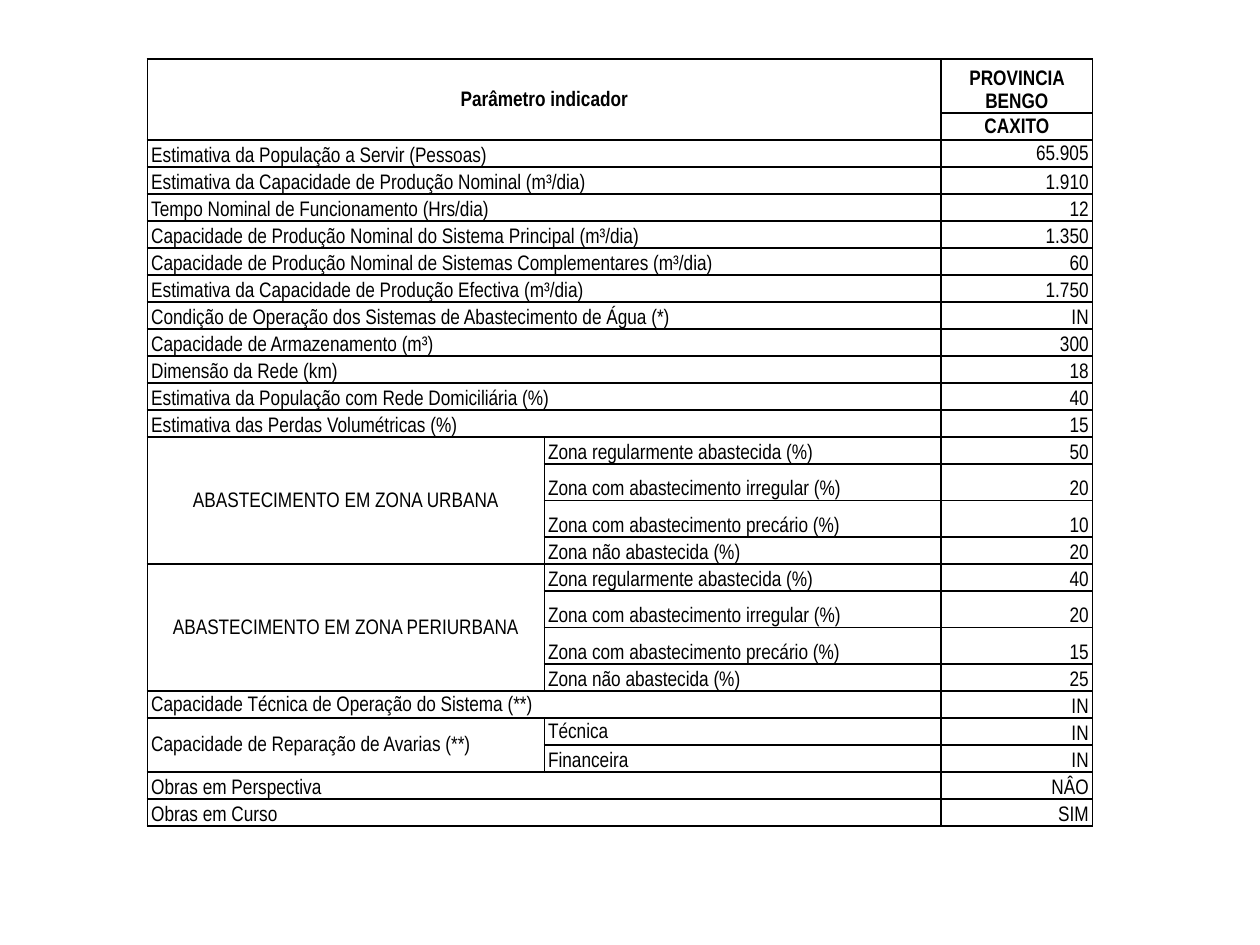
from lxml.etree import SubElement
from pptx import Presentation
from pptx.dml.color import RGBColor
from pptx.enum.text import MSO_ANCHOR as Anchor, PP_ALIGN as Align
from pptx.oxml.ns import qn
from pptx.util import Inches, Pt

BLACK = RGBColor(0, 0, 0)
WHITE = RGBColor(255, 255, 255)

# Table content: (label, value) across the full width
GENERAL = [
    ("Estimativa da População a Servir (Pessoas)", "65.905"),
    ("Estimativa da Capacidade de Produção Nominal (m³/dia)", "1.910"),
    ("Tempo Nominal de Funcionamento (Hrs/dia)", "12"),
    ("Capacidade de Produção Nominal do Sistema Principal (m³/dia)", "1.350"),
    ("Capacidade de Produção Nominal de Sistemas Complementares (m³/dia)", "60"),
    ("Estimativa da Capacidade de Produção Efectiva (m³/dia)", "1.750"),
    ("Condição de Operação dos Sistemas de Abastecimento de Água (*)", "IN"),
    ("Capacidade de Armazenamento (m³)", "300"),
    ("Dimensão da Rede (km)", "18"),
    ("Estimativa da População com Rede Domiciliária (%)", "40"),
    ("Estimativa das Perdas Volumétricas (%)", "15"),
]
SUPPLY = [
    "Zona regularmente abastecida (%)",
    "Zona com abastecimento irregular (%)",
    "Zona com abastecimento precário (%)",
    "Zona não abastecida (%)",
]
ZONES = [
    ("ABASTECIMENTO EM ZONA URBANA", ["50", "20", "10", "20"]),
    ("ABASTECIMENTO EM ZONA PERIURBANA", ["40", "20", "15", "25"]),
]
OPERATION = ("Capacidade Técnica de Operação do Sistema (**)", "IN")
REPAIR = ("Capacidade de Reparação de Avarias (**)",
          [("Técnica", "IN"), ("Financeira", "IN")])
WORKS = [("Obras em Perspectiva", "NÂO"), ("Obras em Curso", "SIM")]

# Row heights: one text line, two lines in the header, taller middle zone rows
LINE = Pt(15.43)
TALL = Inches(0.29)
ZONE_ROWS = [LINE, TALL, TALL, LINE]
ROWS = ([2 * LINE, LINE] + [LINE] * len(GENERAL) + ZONE_ROWS * len(ZONES)
        + [LINE] * (1 + len(REPAIR[1]) + len(WORKS)))
COLUMNS = [0.315, 0.315, 0.12]  # shares of the slide's width


class Sheet:
    """Style of the table and the slide it stands on."""
    font, size, spacing = "Arial Narrow", Pt(12), 1.15
    inset, border = Inches(0.03), Pt(1)

    def __init__(self, prs):
        self.prs = prs
        self.slide = prs.slides.add_slide(prs.slide_layouts[6])

    def table(self, x, y, columns, rows):
        w, h = self.prs.slide_width, self.prs.slide_height
        frame = self.slide.shapes.add_table(
            len(rows), len(columns), int(x * w), int(y * h),
            int(sum(columns) * w), sum(rows))
        self.grid = frame.table
        self.grid.first_row = self.grid.horz_banding = False
        for column, share in zip(self.grid.columns, columns):
            column.width = int(share * w)
        for row, height in zip(self.grid.rows, rows):
            row.height = height
        for cell in self.grid.iter_cells():
            self.borders(cell)
            cell.fill.background()
            cell.margin_left = cell.margin_right = self.inset
            cell.margin_top = cell.margin_bottom = 0
            cell.text_frame.paragraphs[0].font.size = self.size

    def borders(self, cell):
        tc_pr = cell._tc.get_or_add_tcPr()
        for side in ("a:lnL", "a:lnR", "a:lnT", "a:lnB"):
            ln = SubElement(tc_pr, qn(side), w=str(self.border))
            fill = SubElement(ln, qn("a:solidFill"))
            SubElement(fill, qn("a:srgbClr"), val=str(BLACK))

    def cell(self, row, col, text, align=Align.LEFT, anchor=Anchor.BOTTOM,
             span=(1, 1), bold=False, fill=None):
        cell = self.grid.cell(row, col)
        if span != (1, 1):
            cell.merge(self.grid.cell(row + span[0] - 1, col + span[1] - 1))
        cell.vertical_anchor = anchor
        if fill is not None:
            cell.fill.solid()
            cell.fill.fore_color.rgb = fill
        p = cell.text_frame.paragraphs[0]
        p.text = text
        p.alignment = align
        p.line_spacing = self.spacing
        f = p.runs[0].font
        f.name, f.size, f.bold = self.font, self.size, bold
        f.color.rgb = BLACK

    def value(self, row, text, **style):
        self.cell(row, 2, text, Align.RIGHT, **style)

    def wide_row(self, row, label, value, anchor=Anchor.BOTTOM, fill=None):
        self.cell(row, 0, label, anchor=anchor, span=(1, 2), fill=fill)
        self.value(row, value, fill=fill)


def main():
    prs = Presentation()
    prs.slide_width, prs.slide_height = Inches(10), Inches(7.5)
    s = Sheet(prs)
    s.table(0.117, 0.0625, COLUMNS, ROWS)

    # Header
    s.cell(0, 0, "Parâmetro indicador", Align.CENTER, Anchor.MIDDLE, (2, 2), True)
    s.cell(0, 2, "PROVINCIA BENGO", Align.CENTER, bold=True)
    s.cell(1, 2, "CAXITO", Align.CENTER, Anchor.MIDDLE, bold=True)

    # General indicators
    row = 2
    for label, value in GENERAL:
        s.wide_row(row, label, value)
        row += 1
    s.grid.cell(2, 2).vertical_anchor = Anchor.MIDDLE

    # Supply by zone
    for zone, values in ZONES:
        s.cell(row, 0, zone, Align.CENTER, Anchor.MIDDLE, (len(SUPPLY), 1))
        for label, value in zip(SUPPLY, values):
            s.cell(row, 1, label)
            s.value(row, value)
            row += 1

    # Operation and repair
    s.wide_row(row, *OPERATION, anchor=Anchor.MIDDLE)
    row += 1
    title, parts = REPAIR
    s.cell(row, 0, title, anchor=Anchor.MIDDLE, span=(len(parts), 1))
    for (label, value), anchor in zip(parts, (Anchor.MIDDLE, Anchor.BOTTOM)):
        s.cell(row, 1, label, anchor=anchor)
        s.value(row, value)
        row += 1

    # Works
    for label, value in WORKS:
        s.wide_row(row, label, value, fill=WHITE)
        row += 1

    prs.save("out.pptx")


if __name__ == "__main__":
    main()
